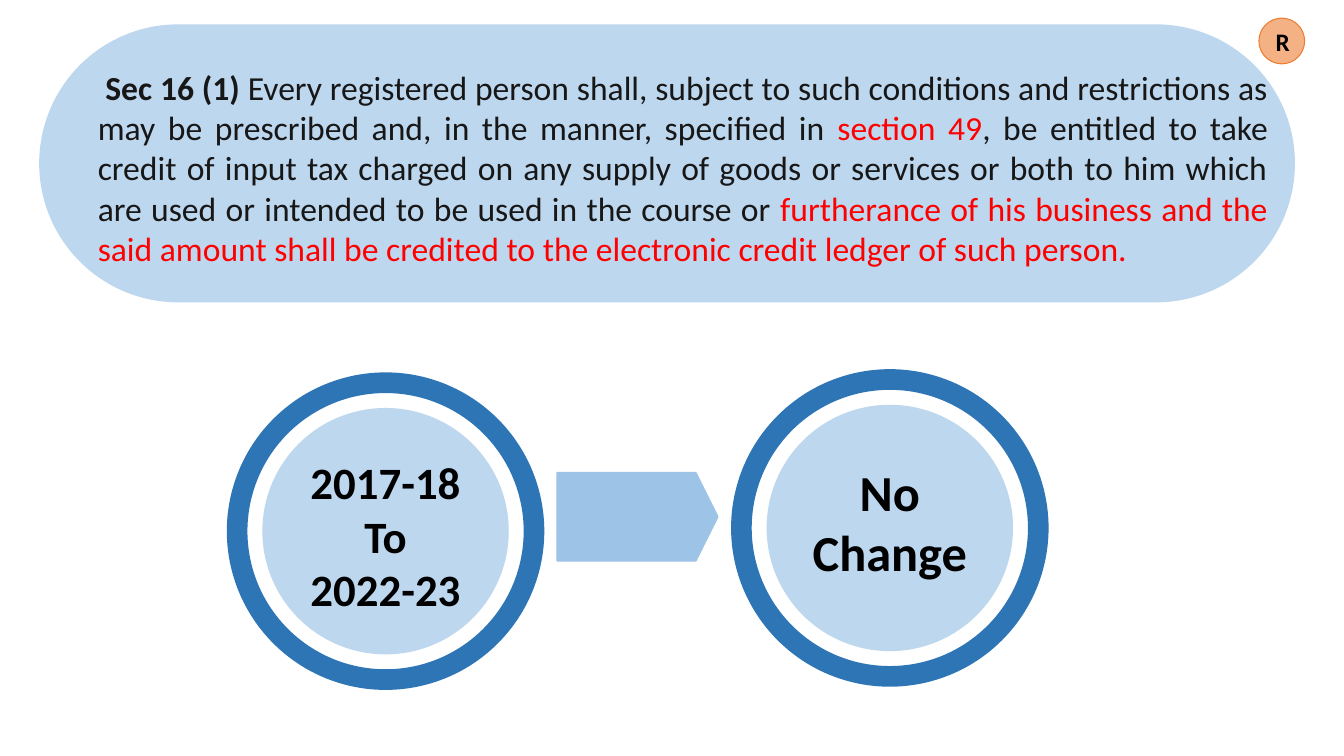
from pptx import Presentation
from pptx.dml.color import RGBColor
from pptx.enum import shapes, text
from pptx.util import Pt

PALE_BLUE = RGBColor(0xBD, 0xD7, 0xEE)
MID_BLUE = RGBColor(0x9D, 0xC3, 0xE6)
DARK_BLUE = RGBColor(0x2E, 0x75, 0xB6)
PEACH = RGBColor(0xF4, 0xB1, 0x83)
ORANGE = RGBColor(0xED, 0x7D, 0x31)
INK = RGBColor(0x18, 0x17, 0x17)
RED = RGBColor(0xFF, 0x00, 0x00)
BLACK = RGBColor(0x00, 0x00, 0x00)

SHAPE = shapes.MSO_SHAPE
ALIGN = text.PP_ALIGN
ANCHOR = text.MSO_ANCHOR

RING_SIZE, DISC_SIZE = 226.8, 176
LABEL_WIDTH = 157

SECTION_RUNS = [
    ("Sec 16 (1)", INK, True),
    (" Every registered person shall, subject to such conditions and "
     "restrictions as may be prescribed and, in the manner, specified in ", INK, False),
    ("section 49", RED, False),
    (", be entitled to take credit of input tax charged on any supply of goods "
     "or services or both to him which are used or intended to be used in the "
     "course or ", INK, False),
    ("furtherance of his business and the said amount shall be credited to the "
     "electronic credit ledger of such person.", RED, False),
]


def set_all(obj, values):
    for name, value in values.items():
        setattr(obj, name, value)


def format_frame(tf, anchor, side, top):
    set_all(tf, {"word_wrap": True, "auto_size": text.MSO_AUTO_SIZE.NONE,
                 "vertical_anchor": anchor,
                 "margin_left": Pt(side), "margin_right": Pt(side),
                 "margin_top": Pt(top), "margin_bottom": Pt(top)})


def add_run(p, words, size, color, bold=True):
    r = p.add_run()
    r.text = words
    set_all(r.font, {"name": "Calibri", "size": Pt(size), "bold": bold})
    r.font.color.rgb = color


def write_lines(tf, lines, size):
    for i, line in enumerate(lines):
        p = tf.add_paragraph() if i else tf.paragraphs[0]
        p.alignment = ALIGN.CENTER
        add_run(p, line, size, BLACK)


def add_filled(parent, kind, box, fill, line=None, width=0.75, adj=None):
    sp = parent.add_shape(kind, *map(Pt, box))
    sp.shadow.inherit = False
    sp.fill.solid()
    sp.fill.fore_color.rgb = fill
    if line is None:
        sp.line.fill.background()
    else:
        sp.line.color.rgb = line
        sp.line.width = Pt(width)
    if adj is not None:
        sp.adjustments[0] = adj
    return sp


def add_ringed_label(slide, left, top, lines, size, label_top, label_height):
    group = slide.shapes.add_group_shape().shapes
    inset = (RING_SIZE - DISC_SIZE) / 2
    add_filled(group, SHAPE.DONUT, (left, top, RING_SIZE, RING_SIZE),
               DARK_BLUE, adj=0.065)
    add_filled(group, SHAPE.OVAL,
               (left + inset, top + inset, DISC_SIZE, DISC_SIZE), PALE_BLUE)
    label_left = left + (RING_SIZE - LABEL_WIDTH) / 2
    sp = group.add_textbox(Pt(label_left), Pt(label_top),
                           Pt(LABEL_WIDTH), Pt(label_height))
    format_frame(sp.text_frame, ANCHOR.BOTTOM, 0, 3.6)
    write_lines(sp.text_frame, lines, size)


def add_section_text(slide):
    sp = slide.shapes.title
    set_all(sp, {"left": Pt(60.5), "top": Pt(77), "width": Pt(854.6), "height": Pt(85)})
    format_frame(sp.text_frame, ANCHOR.MIDDLE, 9.36, 9.36)
    p = sp.text_frame.paragraphs[0]
    p.alignment = ALIGN.JUSTIFY
    p._p.get_or_add_pPr().set("indent", str(Pt(5.4)))
    for words, color, bold in SECTION_RUNS:
        add_run(p, words, 24, color, bold)
    return sp


def add_badge(slide, letter):
    sp = add_filled(slide.shapes, SHAPE.OVAL, (899.3, 13, 32.6, 32.6), PEACH, ORANGE)
    format_frame(sp.text_frame, ANCHOR.MIDDLE, 7.2, 7.2)
    write_lines(sp.text_frame, [letter], 18)


def main():
    prs = Presentation()
    set_all(prs, {"slide_width": Pt(960), "slide_height": Pt(540)})
    slide = prs.slides.add_slide(prs.slide_layouts[5])

    # Section text on its rounded panel
    panel = add_filled(slide.shapes, SHAPE.ROUNDED_RECTANGLE,
                       (28, 17.4, 897, 198.6), PALE_BLUE, adj=0.5)
    title = add_section_text(slide)
    title.element.addprevious(panel.element)

    # Period, arrow and outcome
    add_ringed_label(slide, 162, 266, ["2017-18", "To", "2022-23"], 32, 319.7, 123.8)
    add_ringed_label(slide, 522.2, 263.7, ["No Change"], 36, 324.7, 94.3)
    add_filled(slide.shapes, SHAPE.PENTAGON, (398, 337.6, 114.8, 63),
               MID_BLUE, MID_BLUE, 0.96, adj=0.25)

    # Corner badge
    add_badge(slide, "R")

    prs.save("out.pptx")


if __name__ == "__main__":
    main()
